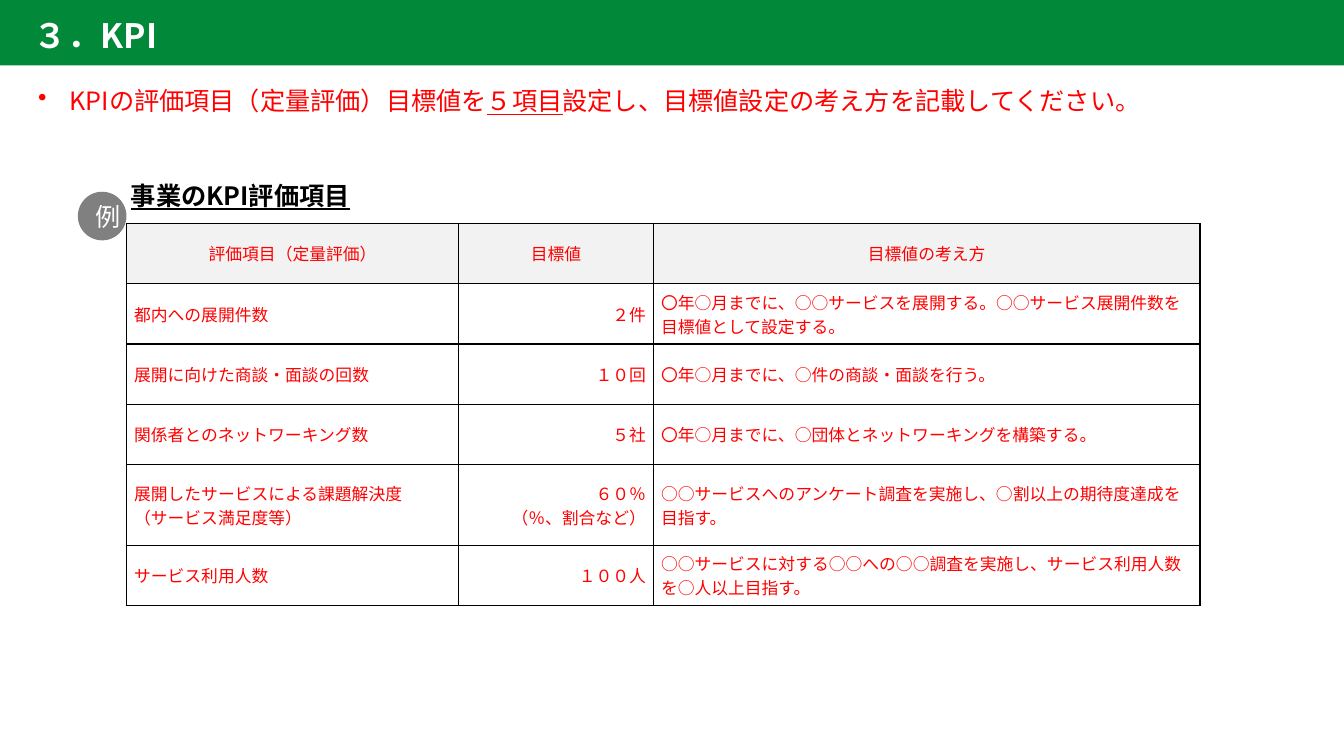
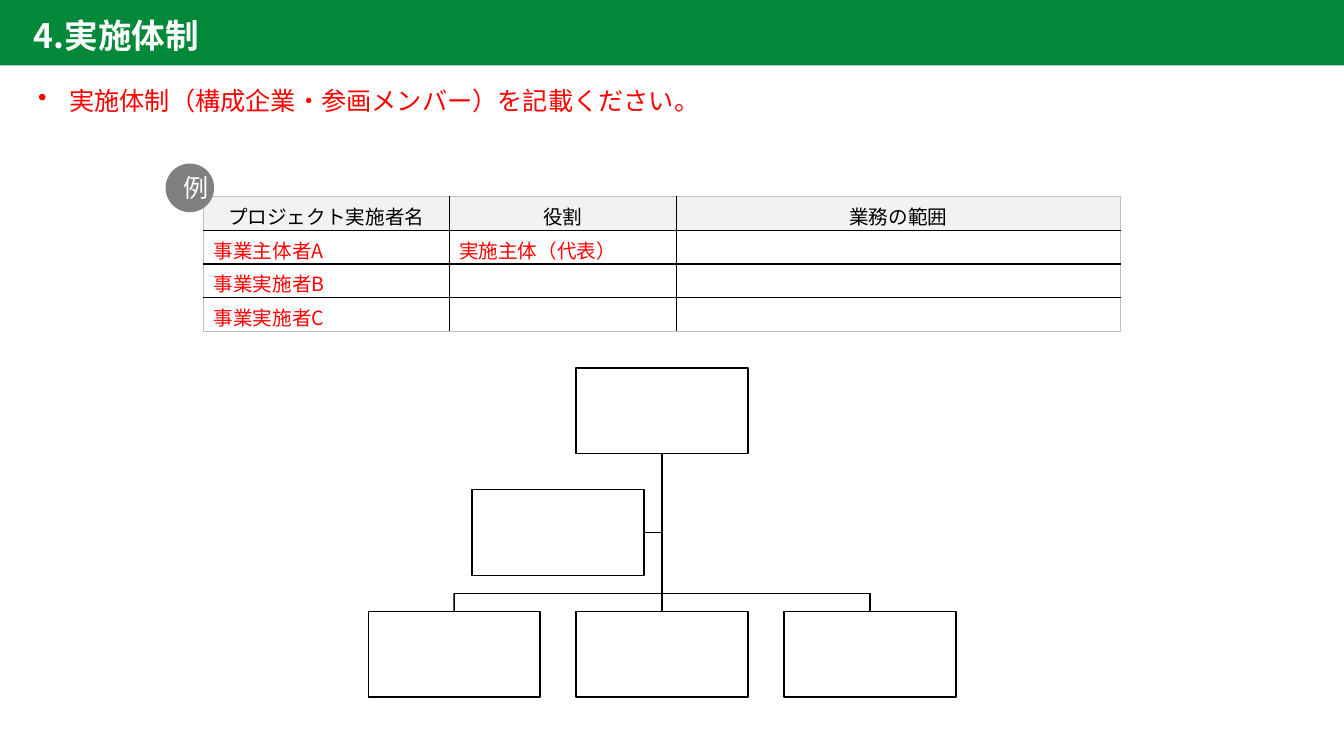
from dataclasses import dataclass

import lxml.etree
import pptx
import pptx.dml.color
import pptx.enum.shapes
import pptx.enum.text
import pptx.oxml.ns
import pptx.util

Cm = pptx.util.Cm
Pt = pptx.util.Pt
RGB = pptx.dml.color.RGBColor.from_string
qn = pptx.oxml.ns.qn
ALIGN = pptx.enum.text.PP_ALIGN
ANCHOR = pptx.enum.text.MSO_ANCHOR
SHAPE = pptx.enum.shapes.MSO_SHAPE
STRAIGHT = pptx.enum.shapes.MSO_CONNECTOR.STRAIGHT


@dataclass(frozen=True)
class Theme:
    font: str = "Noto Sans CJK JP"
    green: str = "018838"
    red: str = "FF0000"
    black: str = "000000"
    white: str = "FFFFFF"
    badge: str = "808080"
    header: str = "F2F2F2"
    frame: str = "BFBFBF"
    title: int = 24
    body: int = 18
    roles: int = 14
    kpi: int = 12
    line: float = 1


T = Theme()
SLIDE_W, SLIDE_H = 33.87, 19.05


# Text and shape helpers
def style(p, size, color, bold=None, align=None):
    p.alignment = align
    f = p.font
    f.size, f.bold, f.name = Pt(size), bold, T.font
    f.color.rgb = RGB(color)
    defaults = p._p.pPr.find(qn("a:defRPr"))
    lxml.etree.SubElement(defaults, qn("a:ea"), typeface=T.font)


def set_margins(part, left, top, right, bottom):
    part.margin_left, part.margin_top = Cm(left), Cm(top)
    part.margin_right, part.margin_bottom = Cm(right), Cm(bottom)


def add_box(s, kind, x, y, w, h, fill, line=None):
    sp = s.shapes.add_shape(kind, Cm(x), Cm(y), Cm(w), Cm(h))
    sp.shadow.inherit = False
    sp.fill.solid()
    sp.fill.fore_color.rgb = RGB(fill)
    if line:
        sp.line.color.rgb = RGB(line)
        sp.line.width = Pt(T.line)
    else:
        sp.line.fill.background()
    return sp


def add_text(s, x, y, w, h):
    tf = s.shapes.add_textbox(Cm(x), Cm(y), Cm(w), Cm(h)).text_frame
    tf.word_wrap = True
    return tf.paragraphs[0]


def add_line(s, x1, y1, x2, y2):
    c = s.shapes.add_connector(STRAIGHT, Cm(x1), Cm(y1), Cm(x2), Cm(y2))
    c.line.color.rgb = RGB(T.black)
    c.line.width = Pt(T.line)
    lxml.etree.SubElement(c._element.spPr, qn("a:effectLst"))
    return c


# Parts shared by the slides
def add_title(s, text):
    sp = add_box(s, SHAPE.RECTANGLE, 0, 0, SLIDE_W, 1.65, T.green)
    tf = sp.text_frame
    tf.vertical_anchor = ANCHOR.MIDDLE
    set_margins(tf, 0.85, 0.1, 0, 0)
    p = tf.paragraphs[0]
    p.text = text
    style(p, T.title, T.white, bold=True, align=ALIGN.LEFT)


def add_instruction(s, before, underlined="", after=""):
    p = add_text(s, 0.71, 2.03, 32.44, 1.02)
    for text in filter(None, (before, underlined, after)):
        r = p.add_run()
        r.text = text
        if text == underlined:
            r.font.underline = True
    style(p, T.body, T.red)
    p.space_after = Pt(6)
    pPr = p._p.pPr
    pPr.set("marL", str(Cm(0.79)))
    pPr.set("indent", str(-Cm(0.79)))
    bullet = lxml.etree.Element(qn("a:buChar"), char="•")
    pPr.find(qn("a:defRPr")).addprevious(bullet)


def add_badge(s, x, y):
    sp = add_box(s, SHAPE.OVAL, x, y, 1.19, 1.19, T.badge, T.badge)
    sp.text_frame.vertical_anchor = ANCHOR.MIDDLE
    p = sp.text_frame.paragraphs[0]
    p.text = "例"
    style(p, T.body, T.white, align=ALIGN.CENTER)


# Tables
def set_borders(cell, colors):
    tcPr = cell._tc.get_or_add_tcPr()
    for i, (side, color) in enumerate(zip("LRTB", colors)):
        ln = lxml.etree.Element(qn("a:ln" + side), w=str(Pt(T.line)))
        fill = lxml.etree.SubElement(ln, qn("a:solidFill"))
        lxml.etree.SubElement(fill, qn("a:srgbClr"), val=color)
        tcPr.insert(i, ln)


def add_grid(s, x, y, widths, heights, rows, size, header_color, frame,
             margins, anchor, aligns):
    tbl = s.shapes.add_table(len(rows), len(widths), Cm(x), Cm(y),
                             Cm(sum(widths)), Cm(sum(heights))).table
    tbl.first_row = tbl.horz_banding = False
    for col, w in zip(tbl.columns, widths):
        col.width = Cm(w)
    for row, h in zip(tbl.rows, heights):
        row.height = Cm(h)
    last_row, last_col = len(rows) - 1, len(widths) - 1
    for i, texts in enumerate(rows):
        for j, text in enumerate(texts):
            cell = tbl.cell(i, j)
            cell.vertical_anchor = anchor
            set_margins(cell, *margins)
            if i == 0:
                cell.fill.solid()
                cell.fill.fore_color.rgb = RGB(T.header)
            else:
                cell.fill.background()
            edges = (j == 0, j == last_col, i == 0, i == last_row)
            set_borders(cell, [frame if e else T.black for e in edges])
            cell.text_frame.text = text
            for p in cell.text_frame.paragraphs:
                style(p, size, T.red if i else header_color,
                      align=aligns[j] if i else ALIGN.CENTER)


def add_kpi_table(s, x, y):
    rows = [
        ("評価項目（定量評価）", "目標値", "目標値の考え方"),
        ("都内への展開件数", "２件",
         "〇年○月までに、○○サービスを展開する。○○サービス展開件数を目標値として設定する。"),
        ("展開に向けた商談・面談の回数", "１０回",
         "〇年○月までに、○件の商談・面談を行う。"),
        ("関係者とのネットワーキング数", "５社",
         "〇年○月までに、○団体とネットワーキングを構築する。"),
        ("展開したサービスによる課題解決度\n（サービス満足度等）",
         "６０％\v（％、割合など）",
         "○○サービスへのアンケート調査を実施し、○割以上の期待度達成を目指す。"),
        ("サービス利用人数", "１００人",
         "○○サービスに対する○○への○○調査を実施し、サービス利用人数を○人以上目指す。"),
    ]
    add_grid(s, x, y, (8.37, 4.91, 13.77), [1.52] * 4 + [2.03, 1.52], rows,
             T.kpi, T.red, T.black, (0.19, 0, 0.19, 0), ANCHOR.MIDDLE,
             (ALIGN.JUSTIFY, ALIGN.RIGHT, ALIGN.LEFT))


def add_role_table(s, x, y):
    rows = [
        ("プロジェクト実施者名", "役割", "業務の範囲"),
        ("事業主体者A", "実施主体（代表）", ""),
        ("事業実施者B", "", ""),
        ("事業実施者C", "", ""),
    ]
    add_grid(s, x, y, (6.19, 5.72, 11.2), [0.85] * 4, rows,
             T.roles, T.black, T.frame, (0.25, 0.13, 0.25, 0), ANCHOR.TOP,
             [ALIGN.LEFT] * 3)


# Organisation chart: leader, staff and three members
def add_org_chart(s, x, y):
    w, h, gap = 4.33, 2.16, 0.91
    center = x + 1.5 * w + gap
    member_y = y + 2 * (h + gap)
    bus_y = member_y - gap / 2

    def org_box(left, top):
        return add_box(s, SHAPE.RECTANGLE, left, top, w, h, T.white, T.black)

    leader = org_box(center - w / 2, y)
    staff = org_box(center - gap / 2 - w, y + h + gap)
    members = [org_box(x + i * (w + gap), member_y) for i in range(3)]

    trunk = add_line(s, center, y + h, center, member_y)
    trunk.begin_connect(leader, 2)
    staff_y = y + 1.5 * h + gap
    add_line(s, center - gap / 2, staff_y, center, staff_y).begin_connect(staff, 3)
    trunk.end_connect(members[1], 0)

    reach = w + gap
    add_line(s, center - reach, bus_y, center + reach, bus_y)
    for side, member in ((-1, members[0]), (1, members[2])):
        drop_x = center + side * reach
        add_line(s, drop_x, bus_y, drop_x, member_y).end_connect(member, 0)


# Slides
def kpi_slide(s):
    add_title(s, "３．KPI")
    add_instruction(s, "KPIの評価項目（定量評価）目標値を", "５項目",
                    "設定し、目標値設定の考え方を記載してください。")
    p = add_text(s, 3.05, 4.5, 8.41, 0.94)
    p.text = "事業のKPI評価項目"
    style(p, T.body, T.black, bold=True)
    p.font.underline = True
    p.line_spacing, p.space_before = 0.9, Pt(10)
    add_kpi_table(s, 3.19, 5.63)
    add_badge(s, 1.98, 4.85)


def team_slide(s):
    add_title(s, "4.実施体制")
    add_instruction(s, "実施体制（構成企業・参画メンバー）を記載ください。")
    add_role_table(s, 5.13, 4.95)
    add_org_chart(s, 9.28, 9.27)
    add_badge(s, 4.19, 4.14)


def main():
    prs = pptx.Presentation()
    prs.slide_width, prs.slide_height = Cm(SLIDE_W), Cm(SLIDE_H)
    for build in (kpi_slide, team_slide):
        build(prs.slides.add_slide(prs.slide_layouts[6]))
    prs.save("out.pptx")


if __name__ == "__main__":
    main()
